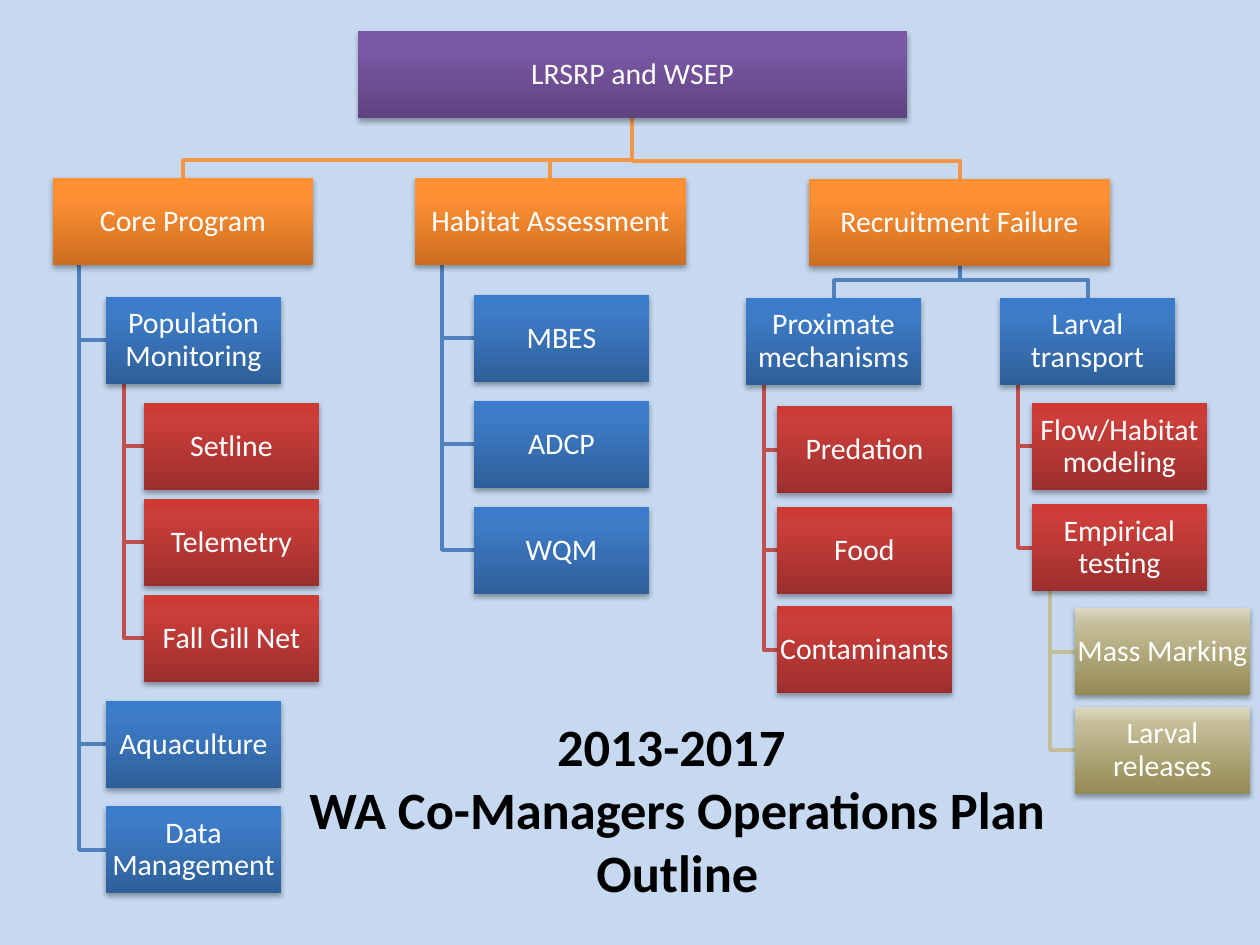
from copy import deepcopy

from lxml import etree
from pptx import Presentation
from pptx import util as u
from pptx.dml.color import RGBColor
from pptx.enum import shapes, text
from pptx.oxml.ns import qn

PX = 914400 / 126  # EMU per px
BOX_H = 87
BOX_W = 175
BUS_GAP = 18  # from a fork's crossbar down to the child box
FONT = "Calibri"

COLORS = {"background": "C6D9F1", "box text": "FFFFFF", "title": "000000", "shadow": "000000"}

# One entry per depth of the tree: gradient from bottom to top
GRADIENTS = [
    {0: "5F4480", 0.8: "7B58A6", 1: "7C57A8"},
    {0: "CC6E20", 0.8: "FF9034", 1: "FF9136"},
    {0: "2F5F99", 0.8: "3D7CC7", 1: "3A7CCB"},
    {0: "9C2F2D", 0.8: "CB3E3A", 1: "CE3B37"},
    {0: "948A54", 0.8: "C4BD97", 1: "DDD9C3"},
]
# Colour of the line that leads to a box of each depth
LINES = [None, "F79646", "4F81BD", "C0504D", "C4BD97"]


def node(label, x, y, children=(), w=BOX_W, fork=False):
    return {"label": label, "x": x, "y": y, "w": w, "children": children, "fork": fork}


def column(x, **tops):
    """Leaf boxes that share a left edge; underscores stand for spaces."""
    return [node(label.replace("_", " "), x, y) for label, y in tops.items()]


CORE = node("Core Program", 53, 178, w=260, children=[
    node("Population Monitoring", 106, 297,
         column(144, Setline=403, Telemetry=499, Fall_Gill_Net=595)),
    *column(106, Aquaculture=701, Data_Management=806),
])
HABITAT = node("Habitat Assessment", 415, 178, w=271,
               children=column(474, MBES=295, ADCP=401, WQM=507))
RECRUITMENT = node("Recruitment Failure", 809, 179, w=301, fork=True, children=[
    node("Proximate mechanisms", 746, 298,
         column(777, Predation=406, Food=507, Contaminants=606)),
    node("Larval transport", 1000, 298, [
        node("Flow/Habitat modeling", 1032, 403),
        node("Empirical testing", 1032, 504,
             column(1075, Mass_Marking=608, Larval_releases=707)),
    ]),
])
PLAN = node("LRSRP and WSEP", 358, 31, [CORE, HABITAT, RECRUITMENT], w=549, fork=True)


def emu(px):
    return u.Emu(round(px * PX))


def rgb(value):
    return RGBColor.from_string(value)


def add_run(p, words, size, color, bold=False):
    r = p.add_run()
    r.text = words
    r.font.name, r.font.size, r.font.bold = FONT, u.Pt(size), bold
    r.font.color.rgb = rgb(color)


def add_path(slide, points, color):
    builder = slide.shapes.build_freeform(*points[0], scale=PX)
    builder.add_line_segments(points[1:], close=False)
    sp = builder.convert_to_shape()
    sp.fill.background()
    sp.line.color.rgb = rgb(color)
    sp.line.width = u.Pt(2)
    sp.shadow.inherit = False


def set_gradient(sp, stops):
    sp.fill.gradient()
    sp.fill.gradient_angle = 90
    stop_list = sp.element.spPr.find(".//" + qn("a:gsLst"))
    stop_list.append(deepcopy(stop_list[-1]))
    for stop, (position, color) in zip(sp.fill.gradient_stops, stops.items()):
        stop.position = position
        stop.color.rgb = rgb(color)


def set_shadow(sp):
    sp.shadow.inherit = False
    effects = sp.element.spPr.find(qn("a:effectLst"))
    outer = etree.SubElement(effects, qn("a:outerShdw"), blurRad="40000", dist="23000",
                             dir="5400000", rotWithShape="0")
    color = etree.SubElement(outer, qn("a:srgbClr"), val=COLORS["shadow"])
    etree.SubElement(color, qn("a:alpha"), val="35000")


def add_box(slide, box, depth):
    sp = slide.shapes.add_shape(shapes.MSO_SHAPE.RECTANGLE, emu(box["x"]), emu(box["y"]),
                                emu(box["w"]), emu(BOX_H))
    set_gradient(sp, GRADIENTS[depth])
    sp.line.fill.background()
    set_shadow(sp)
    tf = sp.text_frame
    tf.word_wrap = True
    tf.vertical_anchor = text.MSO_ANCHOR.MIDDLE
    tf.margin_left = tf.margin_right = tf.margin_top = tf.margin_bottom = u.Inches(0.01)
    p = tf.paragraphs[0]
    p.alignment = text.PP_ALIGN.CENTER
    p.line_spacing = 0.9
    add_run(p, box["label"], 17, COLORS["box text"])


def add_link(slide, parent, child, depth):
    bottom = parent["y"] + BOX_H
    if parent["fork"]:  # from centre to centre by a crossbar
        start, end = (b["x"] + b["w"] / 2 for b in (parent, child))
        bus = child["y"] - BUS_GAP
        points = [(start, bottom), (start, bus), (end, bus), (end, child["y"])]
    else:  # down a spine one tenth in from the parent's left edge
        spine = parent["x"] + parent["w"] / 10
        middle = child["y"] + BOX_H / 2
        points = [(spine, bottom), (spine, middle), (child["x"], middle)]
    add_path(slide, points, LINES[depth])


def add_links(slide, parent, depth=0):
    for child in parent["children"]:
        add_link(slide, parent, child, depth + 1)
        add_links(slide, child, depth + 1)


def add_boxes(slide, box, depth=0):
    add_box(slide, box, depth)
    for child in box["children"]:
        add_boxes(slide, child, depth + 1)


def add_title(slide):
    sp = slide.shapes.add_textbox(emu(273), emu(735), emu(809), emu(147))
    tf = sp.text_frame
    tf.word_wrap = True
    tf.vertical_anchor = text.MSO_ANCHOR.MIDDLE
    p = tf.paragraphs[0]
    p.alignment = text.PP_ALIGN.CENTER
    add_run(p, "2013-2017 ", 30, COLORS["title"], bold=True)
    p.add_line_break()
    add_run(p, "WA Co-Managers Operations Plan Outline", 30, COLORS["title"], bold=True)


def main():
    prs = Presentation()
    prs.slide_width, prs.slide_height = emu(1260), emu(945)
    slide = prs.slides.add_slide(prs.slide_layouts[6])
    slide.background.fill.solid()
    slide.background.fill.fore_color.rgb = rgb(COLORS["background"])

    # Lines lie behind the boxes
    add_links(slide, PLAN)
    add_boxes(slide, PLAN)
    add_title(slide)
    prs.save("out.pptx")


if __name__ == "__main__":
    main()
